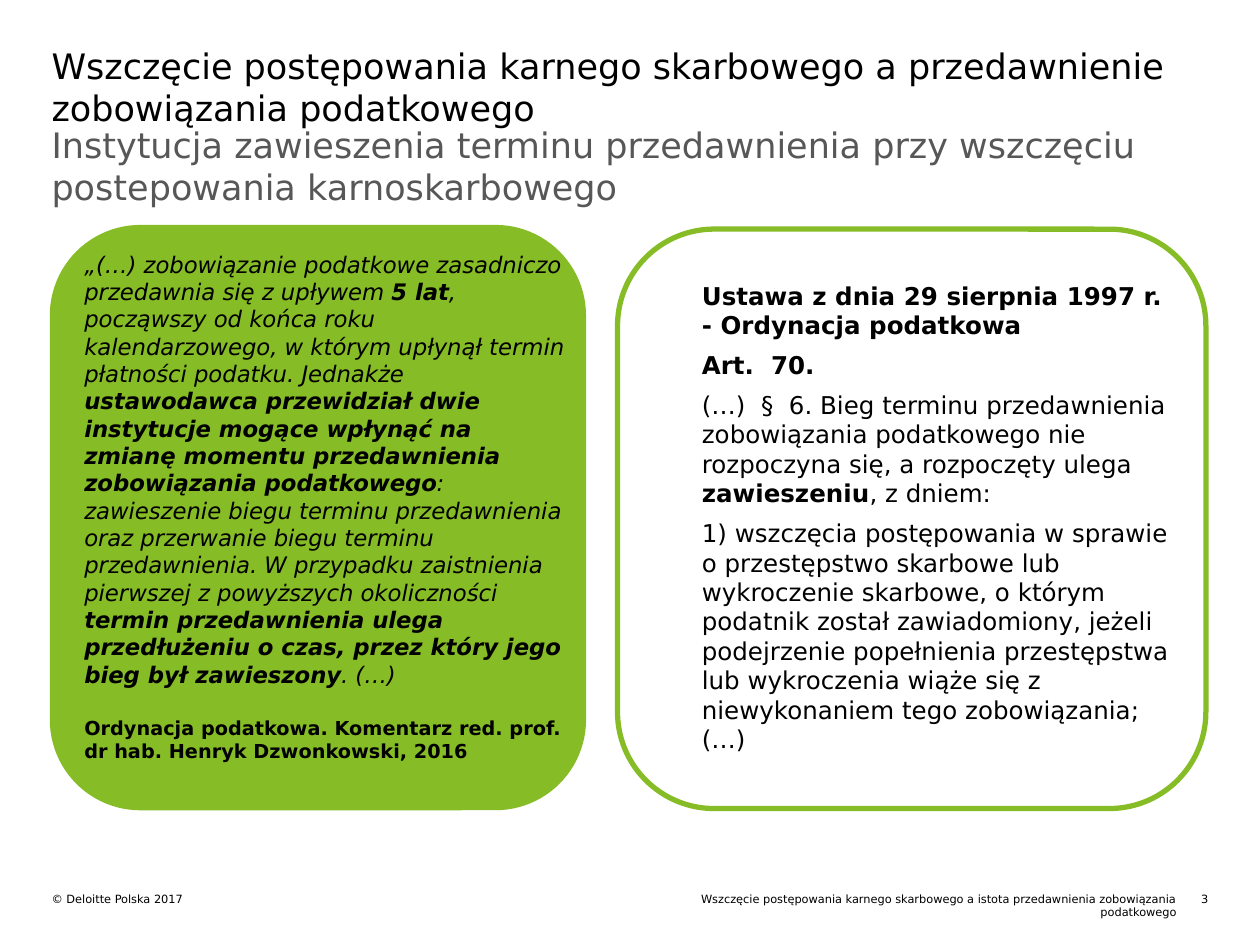
from pptx import Presentation
from pptx.dml.color import RGBColor
from pptx.enum.shapes import MSO_SHAPE
from pptx.enum.text import PP_ALIGN
from pptx.util import Cm, Pt

ROUND_RECT = MSO_SHAPE.ROUNDED_RECTANGLE
LEFT, RIGHT = PP_ALIGN.LEFT, PP_ALIGN.RIGHT
BLACK = RGBColor(0x00, 0x00, 0x00)
GREY = RGBColor(0x57, 0x57, 0x57)
GREEN = RGBColor(0x86, 0xBC, 0x25)
WHITE = RGBColor(0xFF, 0xFF, 0xFF)
FONT = "DejaVu Sans"

# Content: in a list of runs every second one is bold
TITLE = "Wszczęcie postępowania karnego skarbowego a przedawnienie zobowiązania podatkowego"
SUBTITLE = "Instytucja zawieszenia terminu przedawnienia przy wszczęciu postepowania karnoskarbowego"
COMMENTARY = [
    "„(…) zobowiązanie podatkowe zasadniczo przedawnia się z upływem ",
    "5 lat",
    ", począwszy od końca roku kalendarzowego, w którym upłynął termin płatności podatku. Jednakże ",
    "ustawodawca przewidział dwie instytucje mogące wpłynąć na zmianę momentu "
    "przedawnienia zobowiązania podatkowego",
    ": zawieszenie biegu terminu przedawnienia oraz przerwanie biegu terminu przedawnienia. "
    "W przypadku zaistnienia pierwszej z powyższych okoliczności ",
    "termin przedawnienia ulega przedłużeniu o czas, przez który jego bieg był zawieszony",
    ". (…)",
]
CITATION = ["", "Ordynacja podatkowa. Komentarz red. prof. dr hab. Henryk Dzwonkowski, 2016"]
STATUTE = [
    ["", "Ustawa z dnia 29 sierpnia 1997 r. - Ordynacja podatkowa"],
    ["", "Art.  70."],
    ["(…)  §  6. Bieg terminu przedawnienia zobowiązania podatkowego nie rozpoczyna się, "
     "a rozpoczęty ulega ", "zawieszeniu", ", z dniem:"],
    ["1) wszczęcia postępowania w sprawie o przestępstwo skarbowe lub wykroczenie skarbowe, "
     "o którym podatnik został zawiadomiony, jeżeli podejrzenie popełnienia przestępstwa lub "
     "wykroczenia wiąże się z niewykonaniem tego zobowiązania; (…)"],
]
COPYRIGHT = "© Deloitte Polska 2017"
FOOTER = "Wszczęcie postępowania karnego skarbowego a istota przedawnienia zobowiązania podatkowego"
PAGE = "3"

# Page grid in cm
MARGIN, CONTENT_W = 1.04, 23.27
FOOTER_Y = 17.98

prs = Presentation()
prs.slide_width, prs.slide_height = Cm(25.4), Cm(19.05)
s = prs.slides.add_slide(prs.slide_layouts[6])


def add_panel(x, y, w, h, fill, line_width):
    sp = s.shapes.add_shape(ROUND_RECT, Cm(x), Cm(y), Cm(w), Cm(h))
    sp.shadow.inherit = False
    sp.fill.solid()
    sp.fill.fore_color.rgb = fill
    sp.line.color.rgb = GREEN
    sp.line.width = Pt(line_width)


def add_box(x, y, w, h):
    tf = s.shapes.add_textbox(Cm(x), Cm(y), Cm(w), Cm(h)).text_frame
    tf.word_wrap = True
    tf.margin_left = tf.margin_top = tf.margin_right = tf.margin_bottom = 0
    return tf


def add_runs(p, texts, size, color=BLACK, italic=False, align=LEFT):
    p.alignment = align
    for i, text in enumerate(texts):
        if text:
            r = p.add_run()
            r.text = text
            r.font.name, r.font.size = FONT, Pt(size)
            r.font.bold, r.font.italic = i % 2 == 1, italic
            r.font.color.rgb = color


# Panels
add_panel(12.45, 4.62, 11.86, 11.68, WHITE, 3)
add_panel(MARGIN, 4.57, 10.74, 11.73, GREEN, 2)

# Title, subtitle and footer: text, box, size, colour, alignment
LINES = [
    (TITLE, (MARGIN, 0.89, CONTENT_W, 1.93), 20, BLACK, LEFT),
    (SUBTITLE, (MARGIN, 2.49, CONTENT_W, 2.11), 20, GREY, LEFT),
    (COPYRIGHT, (MARGIN, FOOTER_Y, 11.15, 0.28), 6.5, BLACK, LEFT),
    (FOOTER, (13.51, FOOTER_Y, 10.21, 0.56), 6.5, BLACK, RIGHT),
    (PAGE, (23.72, FOOTER_Y, 0.64, 0.28), 6.5, BLACK, RIGHT),
]
for text, box, size, color, align in LINES:
    add_runs(add_box(*box).paragraphs[0], [text], size, color, align=align)

# Commentary on the green panel
tf = add_box(1.7, 5.05, 9.7, 11.25)
add_runs(tf.paragraphs[0], COMMENTARY, 13, italic=True)
p = tf.add_paragraph()
p.space_before = Pt(16)
add_runs(p, CITATION, 11)

# Statute on the outlined panel
tf = add_box(14.15, 5.66, 9.65, 9.63)
for i, texts in enumerate(STATUTE):
    p = tf.add_paragraph() if i else tf.paragraphs[0]
    p.space_after = Pt(6)
    add_runs(p, texts, 14)

prs.save("out.pptx")
